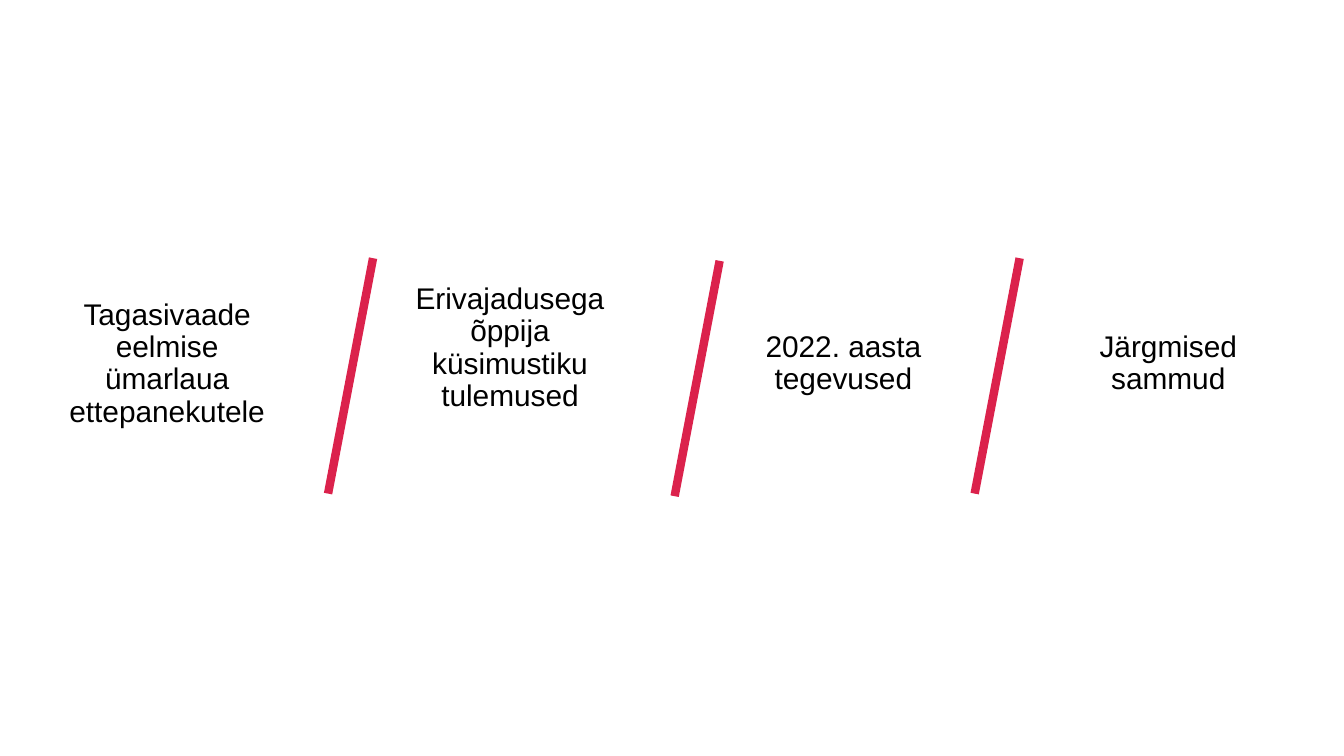
from typing import NamedTuple

from lxml.etree import SubElement
from pptx import Presentation
from pptx.dml.color import RGBColor
from pptx.enum.shapes import MSO_CONNECTOR
from pptx.enum.text import MSO_ANCHOR, PP_ALIGN
from pptx.oxml.ns import qn
from pptx.util import Cm, Pt

BLACK = RGBColor(0x00, 0x00, 0x00)
WHITE = RGBColor(0xFF, 0xFF, 0xFF)
CRIMSON = RGBColor(0xDB, 0x22, 0x4C)

TOPIC_TOP, TOPIC_W, TOPIC_H = 5.49, 4.34, 2.79
SLASH_W, SLASH_H = 0.85, 4.45


class Topic(NamedTuple):
    left: float
    text: str
    inset_top: float = 0.13
    inset_bottom: float = 0.13


class Slash(NamedTuple):
    left: float
    top: float


TOPICS = [
    Topic(0.99, "Tagasivaade eelmise ümarlaua ettepanekutele"),
    # Sits half a line higher than its neighbours
    Topic(7.47, "Erivajadusega õppija küsimustiku tulemused", 0, 0.6),
    Topic(13.77, "2022. aasta tegevused"),
    Topic(19.91, "Järgmised sammud"),
]
SLASHES = [Slash(6.2, 4.88), Slash(12.75, 4.93), Slash(18.42, 4.88)]


def add_topic(s, topic: Topic) -> None:
    box = s.shapes.add_textbox(Cm(topic.left), Cm(TOPIC_TOP), Cm(TOPIC_W), Cm(TOPIC_H))
    tf = box.text_frame
    tf.word_wrap = True
    tf.vertical_anchor = MSO_ANCHOR.MIDDLE
    tf.margin_left = tf.margin_right = Cm(0.25)
    tf.margin_top, tf.margin_bottom = Cm(topic.inset_top), Cm(topic.inset_bottom)
    p = tf.paragraphs[0]
    p.text = topic.text
    p.alignment = PP_ALIGN.CENTER
    p.line_spacing = 0.9
    p.font.name = "Arial"
    p.font.size = Pt(16)
    p.font.color.rgb = BLACK


def add_slash(s, slash: Slash) -> None:
    line = s.shapes.add_connector(
        MSO_CONNECTOR.STRAIGHT,
        Cm(slash.left), Cm(slash.top + SLASH_H),
        Cm(slash.left + SLASH_W), Cm(slash.top),
    )
    line.line.color.rgb = CRIMSON
    line.line.width = Pt(4.5)
    SubElement(line._element.spPr, qn("a:effectLst"))


def main() -> None:
    prs = Presentation()
    prs.slide_width, prs.slide_height = Cm(25.4), Cm(14.29)
    s = prs.slides.add_slide(prs.slide_layouts[6])
    s.background.fill.solid()
    s.background.fill.fore_color.rgb = WHITE

    # Agenda topics
    for topic in TOPICS:
        add_topic(s, topic)

    # Slanted dividers between them
    for slash in SLASHES:
        add_slash(s, slash)

    prs.save("out.pptx")


if __name__ == "__main__":
    main()
